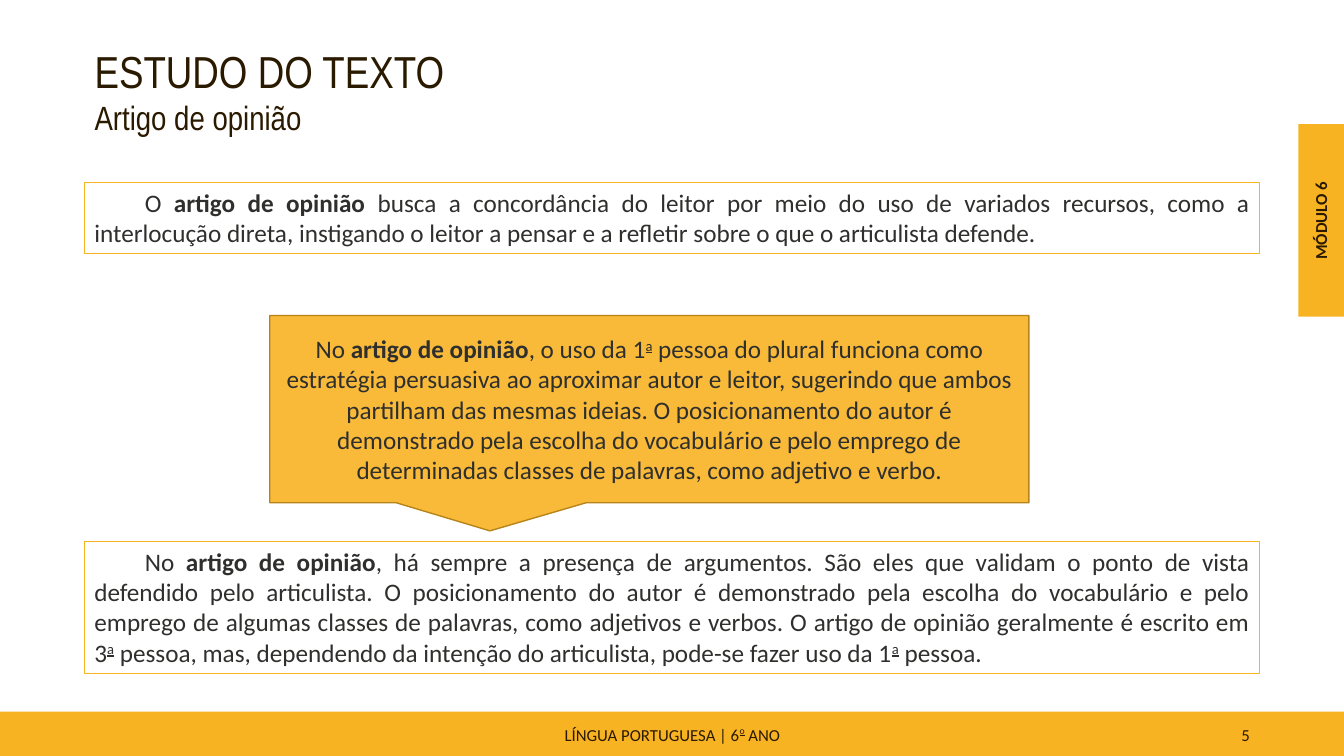
import pptx
import pptx.util
import pptx.dml.color
import pptx.enum.shapes
import pptx.enum.text
import lxml.etree

Cm, Pt = pptx.util.Cm, pptx.util.Pt
RGBColor = pptx.dml.color.RGBColor
SHAPE = pptx.enum.shapes.MSO_SHAPE
ALIGN = pptx.enum.text.PP_ALIGN
ANCHOR = pptx.enum.text.MSO_ANCHOR
AUTO = pptx.enum.text.MSO_AUTO_SIZE

YELLOW = RGBColor(0xF8, 0xB3, 0x23)
OCHRE = RGBColor(0xB7, 0x84, 0x1A)
BROWN = RGBColor(0x2A, 0x1A, 0x00)
GRAY = RGBColor(0x2F, 0x2F, 0x2E)


def add_block(kind, box, fill=None, line=None, line_width=0.75):
    sp = s.shapes.add_shape(kind, *[Cm(v) for v in box])
    sp.shadow.inherit = False
    if fill is None:
        sp.fill.background()
    else:
        sp.fill.solid()
        sp.fill.fore_color.rgb = fill
    if line is None:
        sp.line.fill.background()
    else:
        sp.line.color.rgb = line
        sp.line.width = Pt(line_width)
    return sp


def write(sp, runs, size, color, align, anchor=ANCHOR.MIDDLE, raised=30):
    """Fill one paragraph; each run is (text, style), style "b" bold or "o" ordinal."""
    tf = sp.text_frame
    tf.word_wrap = True
    tf.vertical_anchor = anchor
    p = tf.paragraphs[0]
    p.alignment = align
    p.font.name, p.font.size, p.font.color.rgb = "Calibri", Pt(size), color
    for text, style in runs:
        r = p.add_run()
        r.text = text
        if style == "b":
            r.font.bold = True
        elif style == "o":
            r.font.underline = True
            r.font._element.set("baseline", str(raised * 1000))
    return p


prs = pptx.Presentation()
prs.slide_width, prs.slide_height = Cm(33.87), Cm(19.05)
s = prs.slides.add_slide(prs.slide_layouts[5])

# Footer bar with course name and page number
add_block(SHAPE.RECTANGLE, (0, 17.93, 33.87, 1.13), YELLOW)
footers = [
    ((11.23, 18.03, 11.43, 0.97), ALIGN.CENTER,
     [("LÍNGUA PORTUGUESA | 6", ""), ("o", "o"), (" ANO", "")]),
    ((23.93, 18.03, 7.82, 0.97), ALIGN.RIGHT, [("5", "")]),
]
for box, align, runs in footers:
    tb = s.shapes.add_textbox(*[Cm(v) for v in box])
    p = write(tb, runs, 12, BROWN, align, raised=45)
    p.space_after = Pt(6)

# Module tab on the right edge
add_block(SHAPE.RECTANGLE, (32.72, 3.13, 1.15, 4.85), YELLOW)
tb = s.shapes.add_textbox(Cm(30.86), Cm(5.18), Cm(4.85), Cm(0.77))
tb.rotation = 270
write(tb, [("MÓDULO 6", "b")], 12, BROWN, ALIGN.CENTER, ANCHOR.TOP)

# Title and subtitle
title = s.shapes.title
title.left, title.top, title.width, title.height = Cm(2.13), Cm(0.97), Cm(10.54), Cm(2.64)
tf = title.text_frame
tf.text = "ESTUDO DO TEXTO\nArtigo de opinião"
tf.auto_size = AUTO.NONE
tf.vertical_anchor = ANCHOR.TOP
for p, size in zip(tf.paragraphs, (32, 24)):
    p.alignment = ALIGN.LEFT
    p.font.name, p.font.size, p.font.color.rgb = "Arial Narrow", Pt(size), BROWN

# Outlined paragraphs above and below the callout
paragraphs = [
    (4.6, 1.8, [
        ("O ", ""), ("artigo de opinião ", "b"),
        ("busca a concordância do leitor por meio do uso de variados recursos, como a "
         "interlocução direta, instigando o leitor a pensar e a refletir sobre o que o "
         "articulista defende.", "")]),
    (13.64, 3.33, [
        ("No ", ""), ("artigo de opinião", "b"),
        (", há sempre a presença de argumentos. São eles que validam o ponto de vista "
         "defendido pelo articulista. O posicionamento do autor é demonstrado pela escolha "
         "do vocabulário e pelo emprego de algumas classes de palavras, como adjetivos e "
         "verbos. O artigo de opinião geralmente é escrito em 3", ""), ("a", "o"),
        (" pessoa, mas, dependendo da intenção do articulista, pode-se fazer uso da 1", ""),
        ("a", "o"), (" pessoa.", "")]),
]
for top, height, runs in paragraphs:
    sp = add_block(SHAPE.RECTANGLE, (2.13, top, 29.62, height), line=YELLOW)
    p = write(sp, runs, 18, GRAY, ALIGN.JUSTIFY, ANCHOR.TOP)
    p._p.get_or_add_pPr().set("indent", str(Cm(1.27)))

# Callout with a slightly transparent fill
sp = add_block(SHAPE.RECTANGULAR_CALLOUT, (6.8, 7.95, 19.13, 4.72), YELLOW, OCHRE, 1)
sp.adjustments[0], sp.adjustments[1] = -0.21, 0.65
clr = sp.fill._xPr.find(".//" + pptx.oxml.ns.qn("a:srgbClr"))
lxml.etree.SubElement(clr, pptx.oxml.ns.qn("a:alpha")).set("val", "90000")
write(sp, [
    ("No ", ""), ("artigo de opinião", "b"), (", o uso da 1", ""), ("a", "o"),
    (" pessoa do plural funciona como estratégia persuasiva ao aproximar autor e leitor, "
     "sugerindo que ambos partilham das mesmas ideias. O posicionamento do autor é "
     "demonstrado pela escolha do vocabulário e pelo emprego de determinadas classes de "
     "palavras, como adjetivo e verbo.", "")], 18, GRAY, ALIGN.CENTER)

prs.save("out.pptx")
